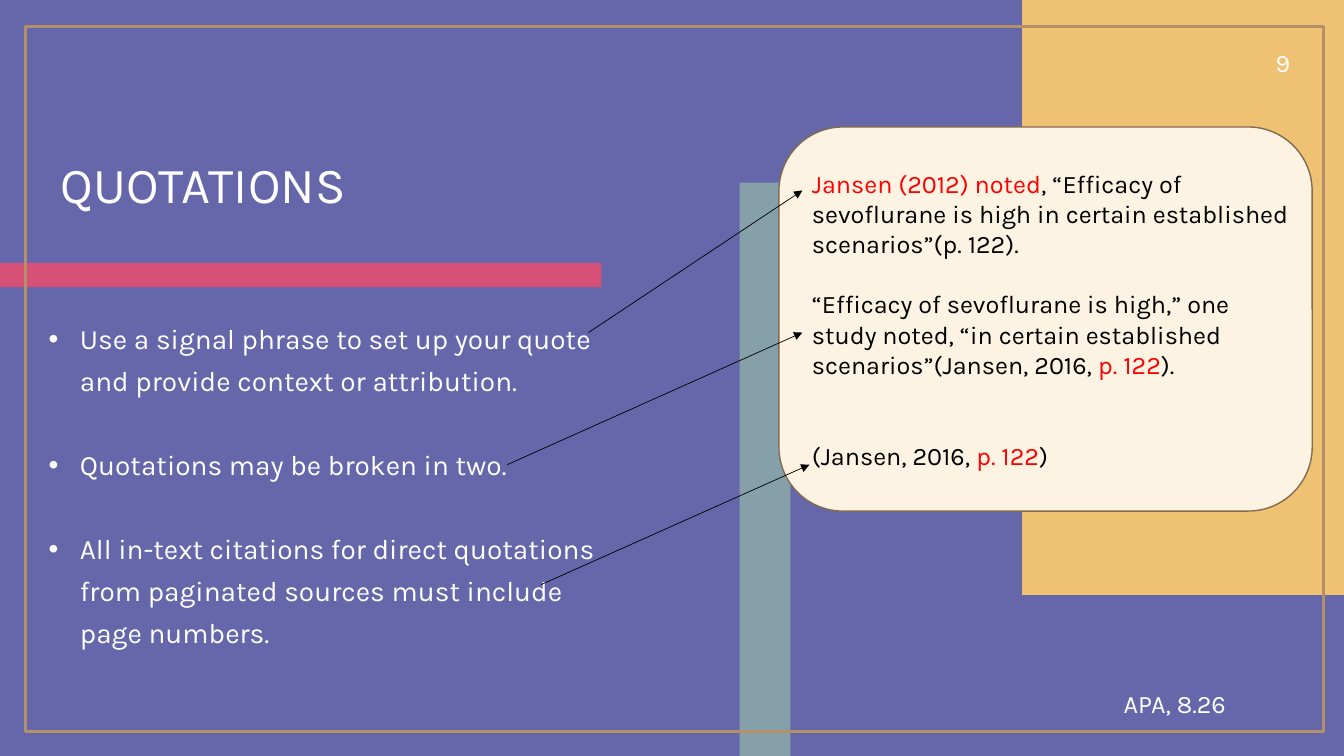
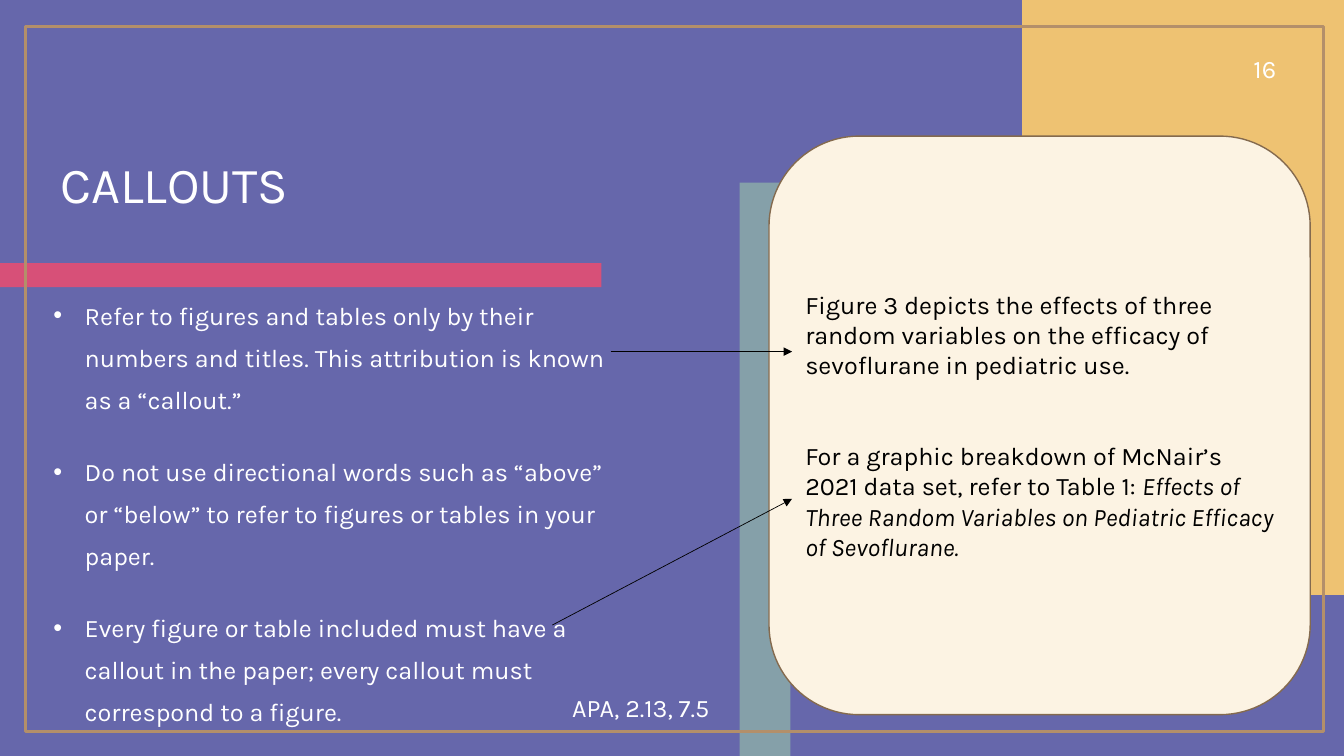
"""Build two slides on quotations and callouts in APA style."""
from lxml import etree
from pptx import Presentation
from pptx.dml.color import RGBColor
from pptx.enum.shapes import MSO_CONNECTOR, MSO_SHAPE
from pptx.enum.text import MSO_ANCHOR, MSO_AUTO_SIZE, PP_ALIGN
from pptx.oxml.ns import qn
from pptx.util import Cm, Pt

RECT, ROUND = MSO_SHAPE.RECTANGLE, MSO_SHAPE.ROUNDED_RECTANGLE
LINE = MSO_CONNECTOR.STRAIGHT
MIDDLE, LEFT = MSO_ANCHOR.MIDDLE, PP_ALIGN.LEFT
FIXED = MSO_AUTO_SIZE.NONE

PURPLE = RGBColor(0x66, 0x67, 0xAB)
TEAL = RGBColor(0x85, 0xA0, 0xA9)
GOLD = RGBColor(0xEE, 0xC2, 0x72)
PINK = RGBColor(0xD7, 0x50, 0x78)
TAN = RGBColor(0xB3, 0x8F, 0x6A)
CREAM = RGBColor(0xFC, 0xF3, 0xE3)
BROWN = RGBColor(0x84, 0x6A, 0x4E)
WHITE = RGBColor(0xFF, 0xFF, 0xFF)
BLACK = RGBColor(0, 0, 0)
RED = RGBColor(0xFF, 0, 0)
FONT = "Karla"

BANDS = [
    ((18.64, 4.6, 1.28, 14.45), TEAL),
    ((25.76, 0, 8.11, 14.99), GOLD),
    ((0, 6.63, 15.16, 0.61), PINK),
    ((0.64, 0.66, 32.72, 17.78), None),
]
PAGES = [
    {
        "title": "QUOTATIONS",
        "body": (0.97, 7.77, 14.63, 9.93),
        "size": 20,
        "gap": 30,
        "points": [
            "Use a signal phrase to set up your quote and provide context or attribution.",
            "Quotations may be broken in two.",
            "All in-text citations for direct quotations from paginated sources "
            "must include page numbers.",
        ],
        "card": (19.63, 3.2, 13.44, 9.68),
        "sides": (0.36, 0.05),
        "quotes": [
            (0, [("Jansen (2012) noted", RED, False),
                 (", “Efficacy of sevoflurane is high in certain established "
                  "scenarios”(p. 122).", BLACK, False)]),
            (21.6, [("“Efficacy of sevoflurane is high,” one study noted, “in certain "
                     "established scenarios”(Jansen, 2016, ", BLACK, False),
                    ("p. 122", RED, False), (").", BLACK, False)]),
            (43.2, [("(Jansen, 2016, ", BLACK, False),
                    ("p. 122", RED, False), (")", BLACK, False)]),
        ],
        "arrows": [
            (14.83, 8.38, 20.22, 4.8),
            (13.64, 14.73, 20.4, 11.71),
            (12.78, 11.71, 20.22, 8.38),
        ],
        "notes": [("APA, 8.26", (28.07, 17.22, 3.18, 1.02)),
                  ("9", (31.9, 1.07, 0.86, 1.02))],
    },
    {
        "title": "CALLOUTS",
        "body": (1.09, 7.14, 14.48, 9.17),
        "size": 18,
        "gap": 21.6,
        "points": [
            "Refer to figures and tables only by their numbers and titles. "
            "This attribution is known as a “callout.”",
            "Do not use directional words such as “above” or “below” "
            "to refer to figures or tables in your paper.",
            "Every figure or table included must have a callout in the paper; "
            "every callout must correspond to a figure.",
        ],
        "card": (19.38, 3.43, 13.64, 14.58),
        "sides": (0.25, 0.25),
        "quotes": [
            (0, [("Figure 3 depicts the effects of three random variables on the "
                  "efficacy of sevoflurane in pediatric use.", BLACK, False)]),
            (43.2, [("For a graphic breakdown of McNair’s 2021 data set, "
                     "refer to Table 1: ", BLACK, False),
                    ("Effects of Three Random Variables on Pediatric Efficacy "
                     "of Sevoflurane.", BLACK, True)]),
        ],
        "arrows": [(15.39, 8.86, 19.96, 8.86), (13.92, 15.75, 19.96, 12.57)],
        "notes": [("APA, 2.13, 7.5", (14.17, 17.32, 4.29, 1.02)),
                  ("16", (31.34, 1.22, 1.22, 1.02))],
    },
]


def draw(slide, kind, box, fill, edge, width):
    """Add a flat shape with an optional fill and edge."""
    shape = slide.shapes.add_shape(kind, *map(Cm, box))
    shape.shadow.inherit = False
    for part, color in ((shape.fill, fill), (shape.line.fill, edge)):
        if color is None:
            part.background()
        else:
            part.solid()
            part.fore_color.rgb = color
    if edge is not None:
        shape.line.width = Pt(width)
    return shape


def style(para, size, color):
    """Set the font and left alignment of a paragraph."""
    para.alignment = LEFT
    para.font.name = FONT
    para.font.size = Pt(size)
    if color is not None:
        para.font.color.rgb = color


deck = Presentation()
deck.slide_width, deck.slide_height = Cm(33.87), Cm(19.05)
layout = deck.slide_layouts[1]
layout.background.fill.solid()
layout.background.fill.fore_color.rgb = PURPLE
slides = [deck.slides.add_slide(layout) for page in PAGES]

for box, color in BANDS:
    band = draw(slides[0], RECT, box, color, None if color else TAN, 2)
    layout.shapes.element.append(band.element)

for slide, page in zip(slides, PAGES):
    title, body = slide.placeholders
    for holder, box in ((title, (1.27, 2.54, 15.57, 4.37)), (body, page["body"])):
        holder.left, holder.top, holder.width, holder.height = map(Cm, box)
        holder.text_frame.auto_size = FIXED
    title.text_frame.text = page["title"]
    title.text_frame.vertical_anchor = MIDDLE
    head = title.text_frame.paragraphs[0]
    head.line_spacing = 0.9
    style(head, 36, WHITE)

    body.text_frame.text = "\n".join(page["points"])
    for i, para in enumerate(body.text_frame.paragraphs):
        props = para._p.get_or_add_pPr()
        props.set("marL", str(Cm(0.79)))
        props.set("indent", str(-Cm(0.79)))
        para.line_spacing = Pt(30)
        para.space_before = Pt(page["gap"] if i else 0)
        style(para, page["size"], WHITE)

    card = draw(slide, ROUND, page["card"], CREAM, BROWN, 1)
    frame = card.text_frame
    frame.word_wrap = True
    frame.vertical_anchor = MIDDLE
    frame.margin_left, frame.margin_right = map(Cm, page["sides"])
    for i, (gap, runs) in enumerate(page["quotes"]):
        para = frame.add_paragraph() if i else frame.paragraphs[0]
        para.space_before = Pt(gap)
        style(para, 18, None)
        for text, color, slant in runs:
            run = para.add_run()
            run.text = text
            run.font.color.rgb = color
            if slant:
                run.font.italic = True

    for ends in page["arrows"]:
        arrow = slide.shapes.add_connector(LINE, *map(Cm, ends))
        arrow.line.color.rgb = BLACK
        arrow.line.width = Pt(0.5)
        props = arrow.element.spPr
        etree.SubElement(props.find(qn("a:ln")), qn("a:tailEnd"), type="triangle")
        etree.SubElement(props, qn("a:effectLst"))

    for text, box in page["notes"]:
        note = slide.shapes.add_textbox(*map(Cm, box)).text_frame
        note.word_wrap = False
        note.text = text
        style(note.paragraphs[0], 18, WHITE)

deck.save("out.pptx")
